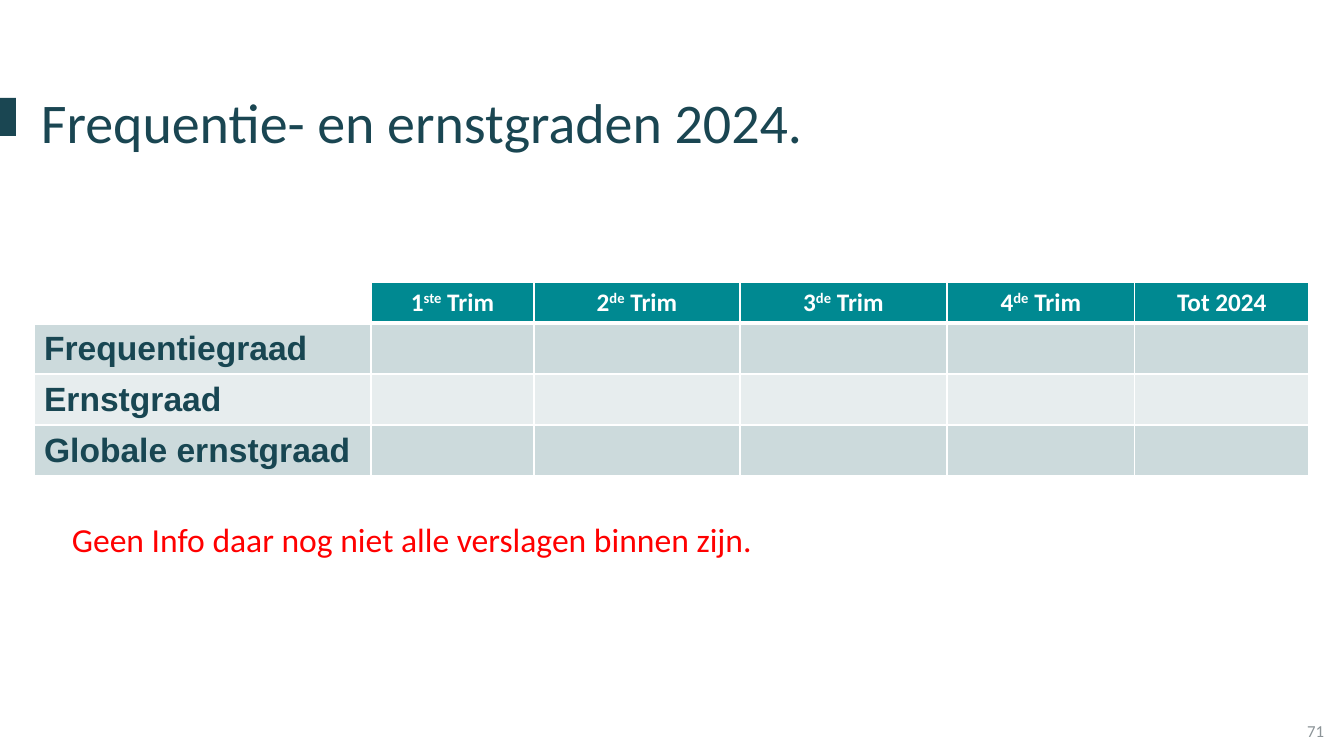
from dataclasses import dataclass

from lxml.etree import SubElement
from pptx import Presentation
from pptx.dml.color import RGBColor as Rgb
from pptx.enum.shapes import MSO_SHAPE as Shape
from pptx.enum.text import MSO_ANCHOR as Anchor, PP_ALIGN as Align
from pptx.oxml.ns import qn
from pptx.util import Emu, Pt

EMU_PER_PX = 914400 / 100.8


@dataclass(frozen=True)
class Theme:
    font: str = "Calibri"
    label_font: str = "Arial"
    dark: str = "1A4652"
    label: str = "184652"
    teal: str = "008991"
    band: str = "CCDADC"
    light_band: str = "E7EDEE"
    white: str = "FFFFFF"
    grey: str = "8C9498"
    red: str = "FF0000"
    title_size: int = 40
    body_size: int = 24
    header_size: int = 18
    number_size: int = 12


def px(length):
    return Emu(round(length * EMU_PER_PX))


class SlideBuilder:
    """Draws styled elements on one slide, with lengths in px."""

    def __init__(self, theme, width, height):
        self.theme = theme
        self.deck = Presentation()
        self.deck.slide_width, self.deck.slide_height = px(width), px(height)
        self.slide = self.deck.slides.add_slide(self.deck.slide_layouts[6])

    def run(self, paragraph, words, size, color, font=None, bold=False, raised=False):
        run = paragraph.add_run()
        run.text = words
        run.font.name = font or self.theme.font
        run.font.size = Pt(size)
        run.font.bold = bold
        run.font.color.rgb = Rgb.from_string(color)
        if raised:
            run.font._element.set("baseline", "30000")

    def bar(self, x, y, width, height, color):
        bar = self.slide.shapes.add_shape(Shape.RECTANGLE, px(x), px(y), px(width), px(height))
        bar.shadow.inherit = False
        bar.fill.solid()
        bar.fill.fore_color.rgb = Rgb.from_string(color)
        bar.line.fill.background()

    def text(self, x, y, width, height, words, size, color, align=Align.LEFT, anchor=Anchor.TOP):
        frame = self.slide.shapes.add_textbox(px(x), px(y), px(width), px(height)).text_frame
        frame.word_wrap = True
        frame.vertical_anchor = anchor
        paragraph = frame.paragraphs[0]
        paragraph.alignment = align
        self.run(paragraph, words, size, color)

    def cell(self, cell, fill, bottom=1):
        cell.vertical_anchor = Anchor.MIDDLE
        for side, points in {"L": 1, "R": 1, "T": 1, "B": bottom}.items():
            border = SubElement(cell._tc.get_or_add_tcPr(), qn(f"a:ln{side}"), w=str(Pt(points)))
            color = SubElement(SubElement(border, qn("a:solidFill")), qn("a:srgbClr"))
            color.set("val", self.theme.white)
        if fill:
            cell.fill.solid()
            cell.fill.fore_color.rgb = Rgb.from_string(fill)
        else:
            cell.fill.background()

    def table(self, x, y, widths, header_height, row_height, headers, labels):
        theme = self.theme
        heights = [header_height] + [row_height] * len(labels)
        table = self.slide.shapes.add_table(
            len(heights), len(widths), px(x), px(y), px(sum(widths)), px(sum(heights))
        ).table
        table.horz_banding = False
        for column, width in zip(table.columns, widths):
            column.width = px(width)
        for row, height in zip(table.rows, heights):
            row.height = px(height)

        self.cell(table.cell(0, 0), None, bottom=3)
        for column, parts in enumerate(headers, 1):
            header = table.cell(0, column)
            self.cell(header, theme.teal, bottom=3)
            paragraph = header.text_frame.paragraphs[0]
            paragraph.alignment = Align.CENTER
            for index, part in enumerate(parts):
                self.run(paragraph, part, theme.header_size, theme.white, bold=True, raised=index == 1)

        for row, label in enumerate(labels, 1):
            for column in range(len(widths)):
                self.cell(table.cell(row, column), theme.band if row % 2 else theme.light_band)
            paragraph = table.cell(row, 0).text_frame.paragraphs[0]
            self.run(paragraph, label, theme.body_size, theme.label, theme.label_font, bold=True)


def main():
    theme = Theme()
    page = SlideBuilder(theme, 1344, 756)
    page.bar(0, 98, 16, 38, theme.dark)
    page.text(1032, 711, 302, 40, "71", theme.number_size, theme.grey, Align.RIGHT, Anchor.MIDDLE)
    page.text(31, 83, 1245, 78, "Frequentie- en ernstgraden 2024.", theme.title_size, theme.dark)

    quarters = [("1", "ste"), ("2", "de"), ("3", "de"), ("4", "de")]
    headers = [(number, ending, " Trim") for number, ending in quarters] + [("Tot 2024",)]
    labels = ["Frequentiegraad", "Ernstgraad", "Globale ernstgraad"]
    page.table(34, 282, [337, 163, 206, 207, 188, 174], 41, 51, headers, labels)

    warning = "Geen Info daar nog niet alle verslagen binnen zijn."
    page.text(62, 514, 1184, 50, warning, theme.body_size, theme.red)
    page.deck.save("out.pptx")


if __name__ == "__main__":
    main()
